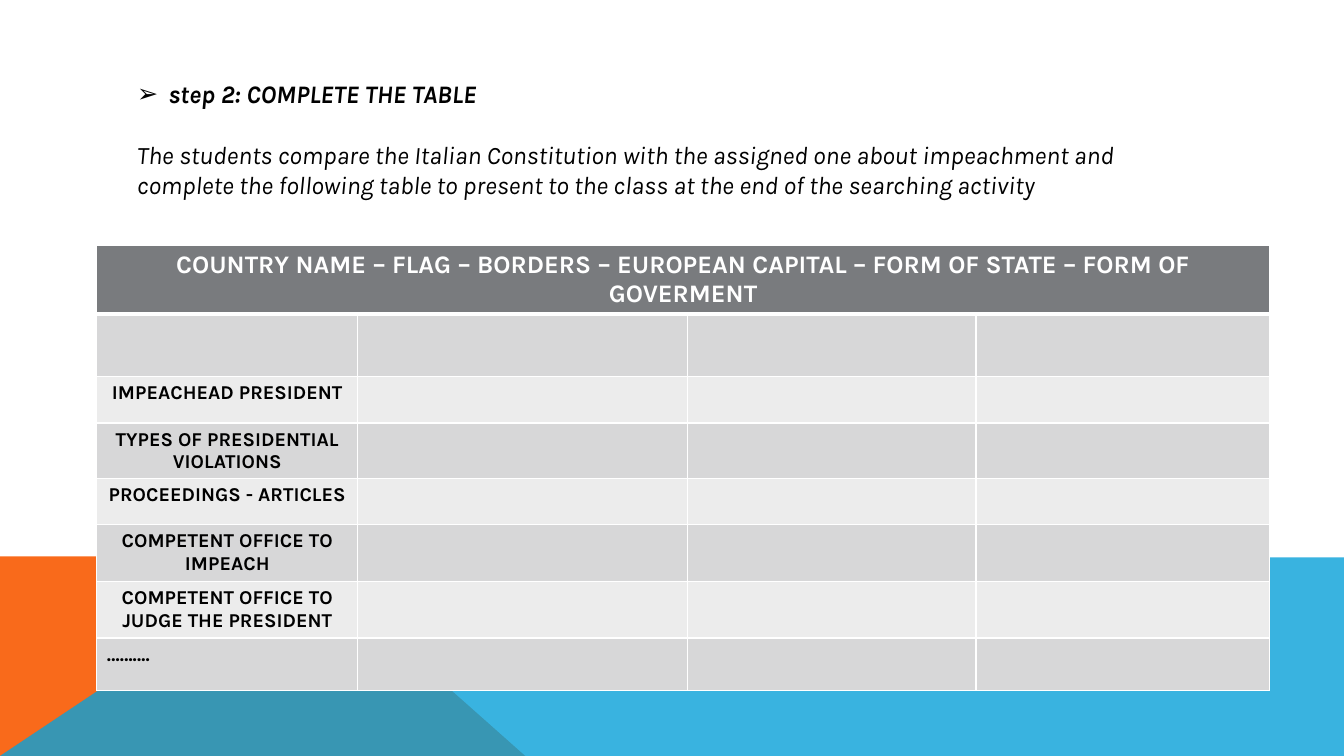
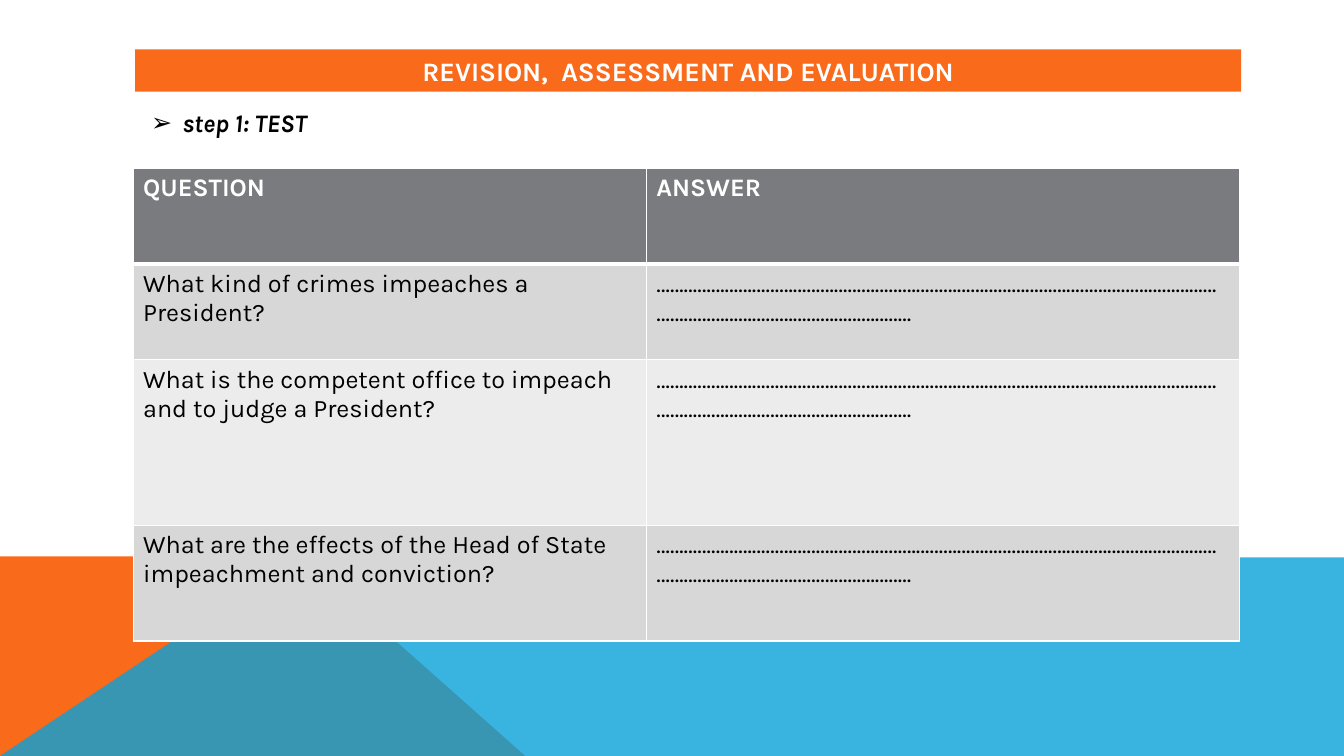
from dataclasses import dataclass

from lxml import etree
from pptx import Presentation
from pptx.dml.color import RGBColor
from pptx.enum.text import MSO_ANCHOR, MSO_AUTO_SIZE, PP_ALIGN
from pptx.oxml.ns import qn
from pptx.util import Inches, Pt

LEFT, CENTER = PP_ALIGN.LEFT, PP_ALIGN.CENTER
TOP, MIDDLE = MSO_ANCHOR.TOP, MSO_ANCHOR.MIDDLE
NO_FIT = MSO_AUTO_SIZE.NONE

FONT = "Karla"
COLORS = {
    "orange": "F96A1B",
    "blue": "08A1D9",
    "header": "797B7E",
    "odd_row": "D7D7D8",
    "even_row": "ECECEC",
    "white": "FFFFFF",
    "black": "000000",
}
TITLE_ONLY = 5
ANSWER_LINE = "…………………………………………………………………………………………………………………………………………………………….."


@dataclass(frozen=True)
class Box:
    left: float
    top: float
    width: float
    height: float


@dataclass(frozen=True)
class TextStyle:
    size: float = 18
    color: str = "black"
    bold: bool = False
    italic: bool = False
    align: PP_ALIGN = LEFT


@dataclass(frozen=True)
class Band:
    color: str
    points: tuple[tuple[float, float], ...]
    opacity: int = 100


@dataclass(frozen=True)
class Grid:
    left: float
    top: float
    columns: tuple[float, ...]
    rows: tuple[float, ...]


HEADER = TextStyle(color="white", bold=True)
HEADER_CENTERED = TextStyle(color="white", bold=True, align=CENTER)
ROW_LABEL = TextStyle(14, bold=True, align=CENTER)
ROW_DOTS = TextStyle(14, bold=True)
BODY = TextStyle()
INSTRUCTION = TextStyle(italic=True)
STEP = TextStyle(bold=True, italic=True)
BANNER = TextStyle(19, "white", bold=True, align=CENTER)

BANDS = (
    Band("orange", ((0, 7.5), (0, 5.52), (2.98, 5.52), (5.21, 7.5))),
    Band("blue", ((0, 7.5), (2.97, 5.52), (13.33, 5.53), (13.33, 7.5)), 80),
)


def rgb(name: str) -> RGBColor:
    return RGBColor.from_string(COLORS[name])


def write(frame, text: str, style: TextStyle) -> None:
    frame.word_wrap = True
    paragraph = frame.paragraphs[0]
    paragraph.text = text
    paragraph.alignment = style.align
    font = paragraph.font
    font.name, font.size = FONT, Pt(style.size)
    font.bold, font.italic = style.bold, style.italic
    font.color.rgb = rgb(style.color)


def place(shape, box: Box, anchor: MSO_ANCHOR = TOP) -> None:
    shape.left, shape.top = Inches(box.left), Inches(box.top)
    shape.width, shape.height = Inches(box.width), Inches(box.height)
    shape.text_frame.auto_size = NO_FIT
    shape.text_frame.vertical_anchor = anchor


def add_text(slide, box: Box):
    text_box = slide.shapes.add_textbox(0, 0, 0, 0)
    place(text_box, box)
    return text_box


def write_step(shape, text: str) -> None:
    """Write a step heading with an arrow bullet."""
    write(shape.text_frame, text, STEP)
    properties = shape.text_frame.paragraphs[0]._p.get_or_add_pPr()
    properties.set("marL", str(Inches(0.31)))
    properties.set("indent", str(-Inches(0.31)))
    etree.SubElement(properties, qn("a:buFont"), typeface="Arial")
    etree.SubElement(properties, qn("a:buChar"), char="➢")


def add_bands(layout, slide) -> None:
    """Draw the bands, then move them behind everything on the layout."""
    for index, band in enumerate(BANDS):
        points = [(Inches(x), Inches(y)) for x, y in band.points]
        builder = slide.shapes.build_freeform(*points[0])
        builder.add_line_segments(points[1:], close=True)
        shape = builder.convert_to_shape()
        shape.shadow.inherit = False
        shape.line.fill.background()
        shape.fill.solid()
        shape.fill.fore_color.rgb = rgb(band.color)
        if band.opacity < 100:
            color = shape.element.spPr.find(qn("a:solidFill"))[0]
            etree.SubElement(color, qn("a:alpha"), val=str(band.opacity * 1000))
        layout.shapes.element.insert(2 + index, shape.element)


def set_borders(cell, row: int) -> None:
    """White rules, with a thick one under the header."""
    widths = {"lnL": 1, "lnR": 1, "lnT": 3 if row == 1 else 1, "lnB": 3 if row == 0 else 1}
    properties = cell._tc.get_or_add_tcPr()
    for index, (side, width) in enumerate(widths.items()):
        line = etree.Element(qn(f"a:{side}"), w=str(Pt(width)))
        fill = etree.SubElement(line, qn("a:solidFill"))
        etree.SubElement(fill, qn("a:srgbClr"), val=COLORS["white"])
        properties.insert(index, line)


def add_grid(slide, grid: Grid):
    """Add an empty table with a header and alternating rows."""
    table = slide.shapes.add_table(
        len(grid.rows), len(grid.columns), Inches(grid.left), Inches(grid.top),
        Inches(sum(grid.columns)), Inches(sum(grid.rows)),
    ).table
    for column, width in zip(table.columns, grid.columns):
        column.width = Inches(width)
    for index, (row, height) in enumerate(zip(table.rows, grid.rows)):
        row.height = Inches(height)
        fill = "header" if index == 0 else "odd_row" if index % 2 else "even_row"
        for cell in row.cells:
            cell.fill.solid()
            cell.fill.fore_color.rgb = rgb(fill)
            set_borders(cell, index)
    return table


def build_comparison(slide) -> None:
    # Step heading and instruction
    step = slide.shapes.title
    place(step, Box(1.26, 0.73, 10.73, 0.4))
    write_step(step, "step 2: COMPLETE THE TABLE")
    instruction = add_text(slide, Box(1.26, 1.33, 10.66, 1.01))
    write(
        instruction.text_frame,
        "The students compare the Italian Constitution with the assigned one about "
        "impeachment and complete the following table to present to the class at "
        "the end of the searching activity",
        INSTRUCTION,
    )

    # Comparison table
    comparison = add_grid(slide, Grid(
        0.96, 2.43, (2.59, 3.27, 2.86, 2.91),
        (0.68, 0.62, 0.46, 0.55, 0.45, 0.57, 0.56, 0.52),
    ))
    comparison.cell(0, 0).merge(comparison.cell(0, 3))
    write(
        comparison.cell(0, 0).text_frame,
        "COUNTRY NAME – FLAG – BORDERS – EUROPEAN CAPITAL – FORM OF STATE – "
        "FORM OF GOVERMENT",
        HEADER_CENTERED,
    )
    topics = (
        "IMPEACHEAD PRESIDENT",
        "TYPES OF PRESIDENTIAL VIOLATIONS",
        "PROCEEDINGS - ARTICLES",
        "COMPETENT OFFICE TO IMPEACH",
        "COMPETENT OFFICE TO JUDGE THE PRESIDENT",
    )
    for row, topic in enumerate(topics, start=2):
        write(comparison.cell(row, 0).text_frame, topic, ROW_LABEL)
    write(comparison.cell(7, 0).text_frame, "……….", ROW_DOTS)


def build_test(slide) -> None:
    # Banner and step heading
    banner = slide.shapes.title
    place(banner, Box(1.34, 0.49, 10.97, 0.42), MIDDLE)
    banner.fill.solid()
    banner.fill.fore_color.rgb = rgb("orange")
    write(banner.text_frame, "REVISION,  ASSESSMENT AND EVALUATION", BANNER)
    write_step(add_text(slide, Box(1.4, 1.02, 7.25, 0.4)), "step 1: TEST")

    # Question table
    test = add_grid(slide, Grid(1.32, 1.67, (5.09, 5.88), (0.95, 0.95, 1.64, 1.15)))
    for column, heading in enumerate(("QUESTION", "ANSWER")):
        write(test.cell(0, column).text_frame, heading, HEADER)
    questions = (
        "What kind of crimes impeaches a President?",
        "What is the competent office to impeach and to judge a President?",
        "What are the effects of the Head of State impeachment and conviction?",
    )
    for row, question in enumerate(questions, start=1):
        write(test.cell(row, 0).text_frame, question, BODY)
        write(test.cell(row, 1).text_frame, ANSWER_LINE, BODY)


def main() -> None:
    deck = Presentation()
    deck.slide_width, deck.slide_height = Inches(13.33), Inches(7.5)
    layout = deck.slide_layouts[TITLE_ONLY]
    comparison_slide = deck.slides.add_slide(layout)
    test_slide = deck.slides.add_slide(layout)
    add_bands(layout, comparison_slide)
    build_comparison(comparison_slide)
    build_test(test_slide)
    deck.save("out.pptx")


if __name__ == "__main__":
    main()
